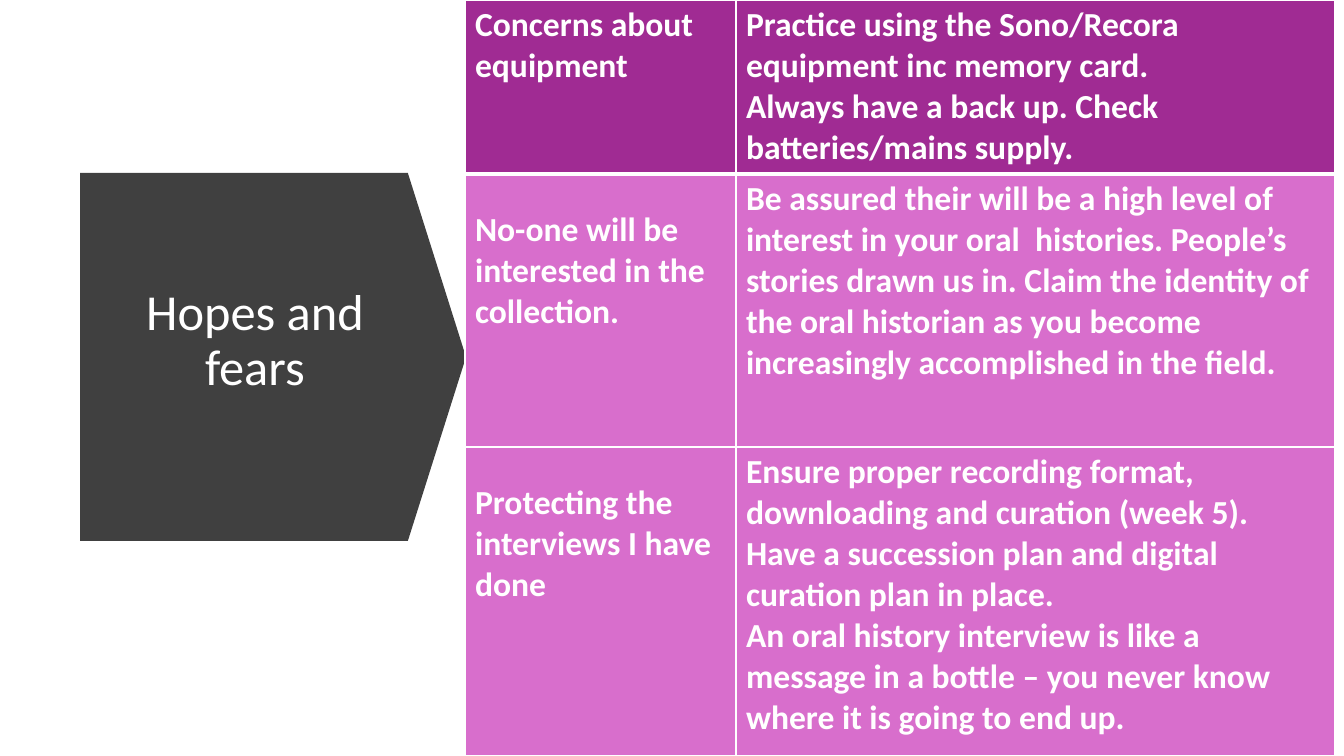
import pptx
import pptx.dml.color
import pptx.enum.shapes
import pptx.enum.text
import pptx.oxml
import pptx.oxml.ns
import pptx.util

# Content
TITLE = "Hopes and fears"
ROWS = [
    (["Concerns about equipment"],
     ["Practice using the Sono/Recora equipment inc memory card.",
      "Always have a back up. Check batteries/mains supply."]),
    (["No-one will be interested in the collection."],
     ["Be assured their will be a high level of interest in your oral  histories. "
      "People’s stories drawn us in. Claim the identity of the oral historian as "
      "you become increasingly accomplished in the field."]),
    (["Protecting the interviews I have done"],
     ["Ensure proper recording format, downloading and curation (week 5).",
      "Have a succession plan and digital curation plan in place.",
      "An oral history interview is like a message in a bottle – you never know "
      "where it is going to end up."]),
]

THEME = {
    "font": "Calibri", "title_size": 36, "table_size": 24,
    "text": "FFFFFF", "arrow": "404040", "border": "FFFFFF",
    "header": "A02B93", "body": "D86ECC",
    "thin": 1, "thick": 3,
}

# Geometry in px
PAGE = (1344, 756)
ARROW = (89, 164, 368, 386)
TITLE_BOX = (110, 201, 290, 281)
TABLE_LEFT = 465
COLUMNS = (271, 599)
ROW_HEIGHTS = (174, 273, 309)
LABEL_TOP = 36  # lowers the labels below the header row


def px(length):
    return pptx.util.Emu(round(length * 914400 / 100.8))


def color(name):
    return pptx.dml.color.RGBColor.from_string(THEME[name])


def add_text(para, text, size, bold=False):
    span = para.add_run()
    span.text = text
    span.font.name = THEME["font"]
    span.font.size = pptx.util.Pt(THEME[size])
    span.font.bold = bold
    span.font.color.rgb = color("text")


def set_borders(cell, top, bottom):
    properties = cell._tc.get_or_add_tcPr()
    sides = {"L": "thin", "R": "thin", "T": top, "B": bottom}
    for index, (side, weight) in enumerate(sides.items()):
        properties.insert(index, pptx.oxml.parse_xml(
            f'<a:ln{side} {pptx.oxml.ns.nsdecls("a")} '
            f'w="{pptx.util.Pt(THEME[weight])}"><a:solidFill>'
            f'<a:srgbClr val="{THEME["border"]}"/></a:solidFill></a:ln{side}>'))


def add_title(page):
    # Arrow pointing at the table
    arrow = page.shapes.add_shape(
        pptx.enum.shapes.MSO_SHAPE.DOWN_ARROW, *map(px, ARROW))
    arrow.rotation = 270
    arrow.adjustments[0] = 1
    arrow.adjustments[1] = 0.158
    arrow.shadow.inherit = False
    arrow.fill.solid()
    arrow.fill.fore_color.rgb = color("arrow")
    arrow.line.fill.background()

    # Upright title over the arrow
    frame = page.shapes.add_textbox(*map(px, TITLE_BOX)).text_frame
    frame.word_wrap = True
    frame.vertical_anchor = pptx.enum.text.MSO_ANCHOR.MIDDLE
    para = frame.paragraphs[0]
    para.alignment = pptx.enum.text.PP_ALIGN.CENTER
    para.line_spacing = 0.9
    add_text(para, TITLE, "title_size")


def add_answers(page):
    table = page.shapes.add_table(
        len(ROWS), len(COLUMNS), px(TABLE_LEFT), px(0),
        px(sum(COLUMNS)), px(sum(ROW_HEIGHTS))).table
    table.horz_banding = False
    for column, width in zip(table.columns, COLUMNS):
        column.width = px(width)

    for r, (row, height) in enumerate(zip(ROWS, ROW_HEIGHTS)):
        table.rows[r].height = px(height)
        for c, lines in enumerate(row):
            cell = table.cell(r, c)
            cell.fill.solid()
            cell.fill.fore_color.rgb = color("body" if r else "header")
            set_borders(cell, "thick" if r == 1 else "thin",
                        "thin" if r else "thick")
            if r and c == 0:
                cell.margin_top = px(LABEL_TOP)
            frame = cell.text_frame
            for i, line in enumerate(lines):
                para = frame.add_paragraph() if i else frame.paragraphs[0]
                add_text(para, line, "table_size", bold=True)


def main():
    deck = pptx.Presentation()
    deck.slide_width, deck.slide_height = map(px, PAGE)
    page = deck.slides.add_slide(deck.slide_layouts[6])
    add_title(page)
    add_answers(page)
    deck.save("out.pptx")


if __name__ == "__main__":
    main()
